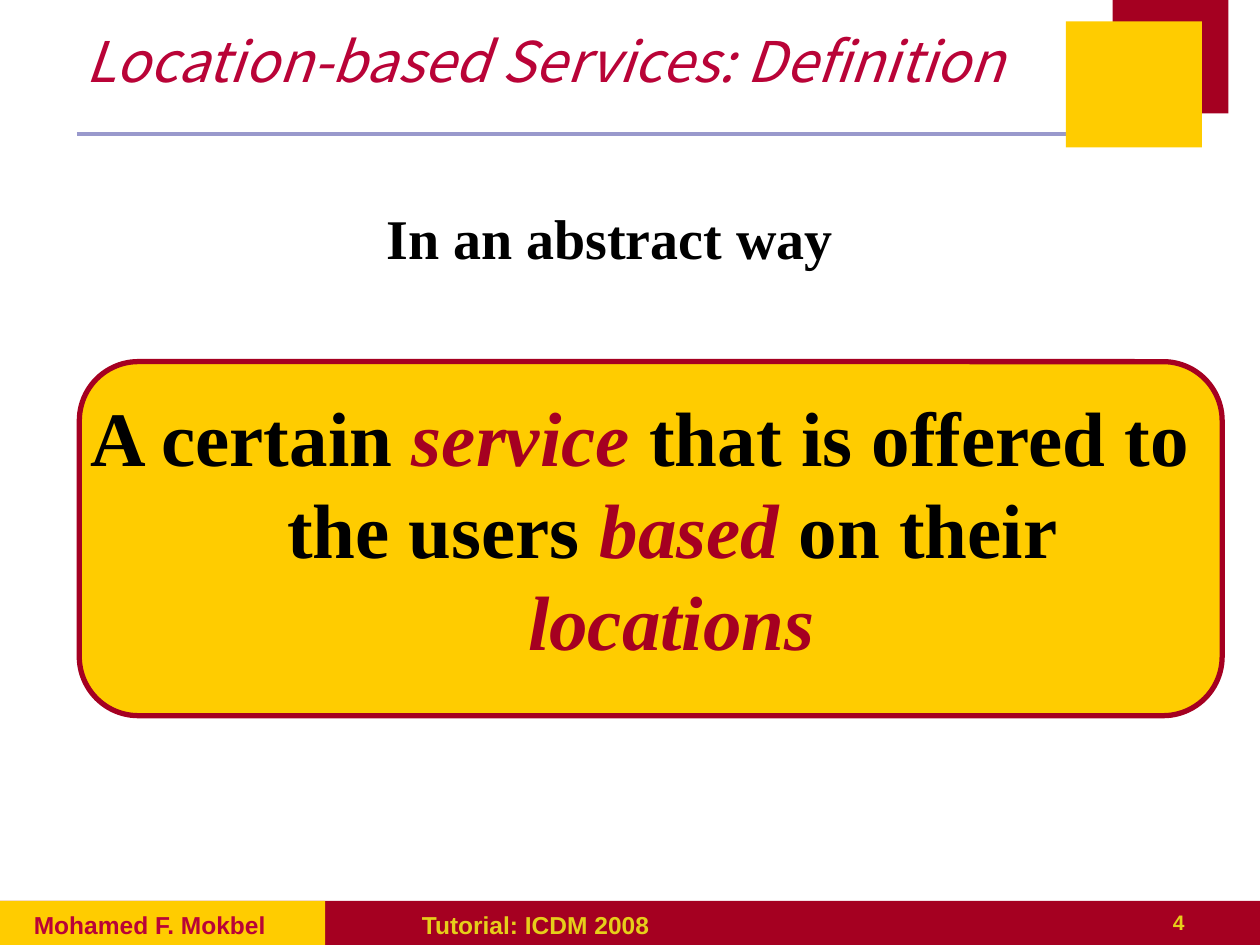
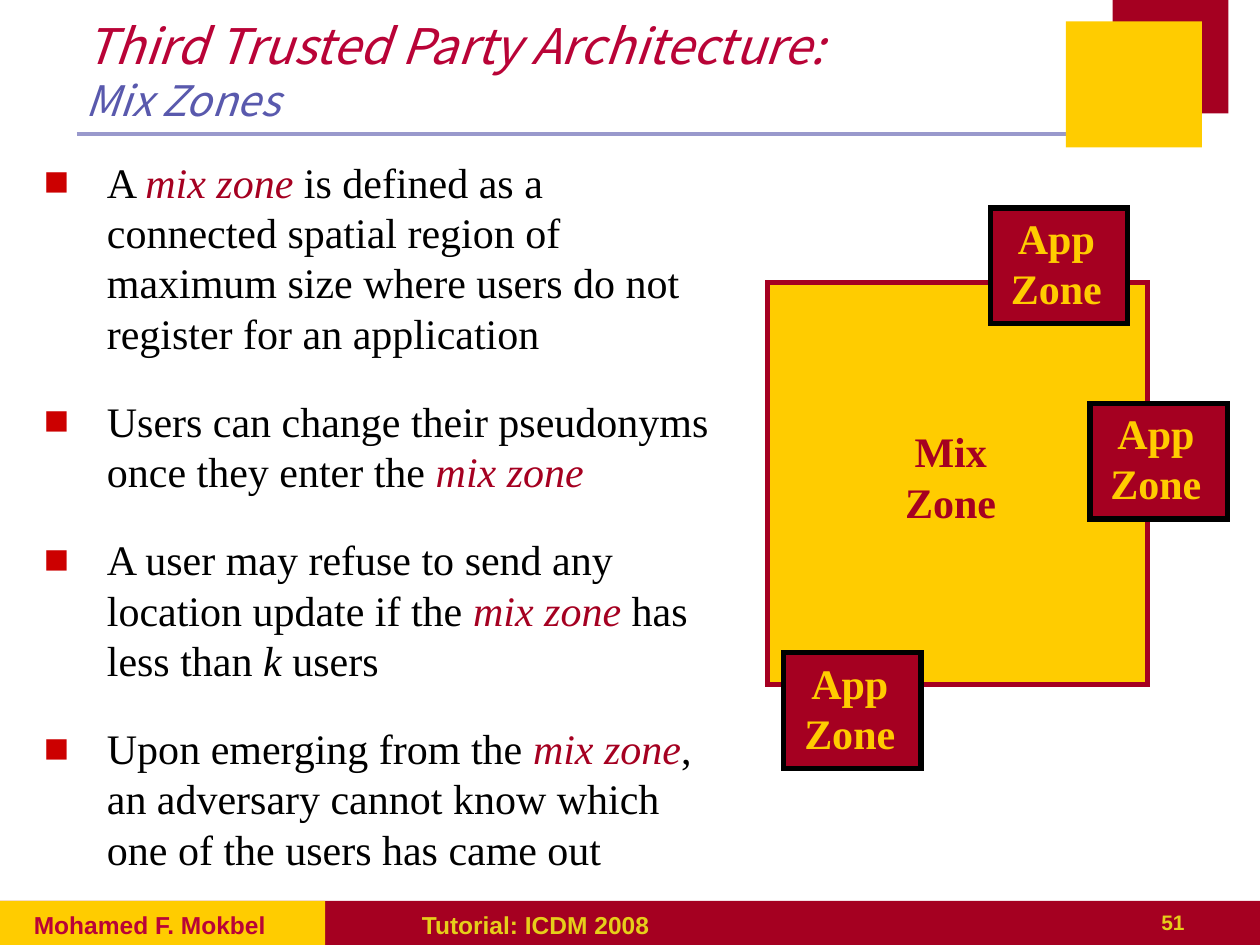
from dataclasses import dataclass
from typing import NamedTuple

from lxml.etree import SubElement
from pptx import Presentation
from pptx.dml.color import RGBColor
from pptx.enum.shapes import MSO_CONNECTOR, MSO_SHAPE
from pptx.enum.text import MSO_ANCHOR, PP_ALIGN
from pptx.oxml.ns import qn
from pptx.util import Inches, Pt


@dataclass(frozen=True)
class Theme:
    maroon: str = "A50021"
    gold: str = "FFCC00"
    crimson: str = "B90337"
    footer_gold: str = "E6CE1A"
    rule: str = "9999CC"
    subtitle: str = "5959AD"
    bullet: str = "CC0000"
    black: str = "000000"
    title_font: str = "Noto Sans CJK KR"
    body_font: str = "Times New Roman"
    footer_font: str = "Arial"
    title_size: int = 32
    long_title_size: int = 28
    lead_size: int = 32
    definition_size: int = 44
    body_size: int = 24
    footer_size: int = 14
    number_size: int = 12


THEME = Theme()


class Box(NamedTuple):
    left: float
    top: float
    width: float
    height: float

    def lengths(self) -> tuple:
        return tuple(Inches(v) for v in self)


class Style(NamedTuple):
    font: str
    size: int
    color: str
    bold: bool = False
    italic: bool = False


class Span(NamedTuple):
    text: str
    style: Style
    break_after: bool = False


class Block(NamedTuple):
    box: Box
    fill: str
    line: str | None = None
    shape: MSO_SHAPE = MSO_SHAPE.RECTANGLE


TITLE = Style(THEME.title_font, THEME.title_size, THEME.crimson, italic=True)
LONG_TITLE = TITLE._replace(size=THEME.long_title_size)
SUBTITLE = TITLE._replace(size=THEME.body_size, color=THEME.subtitle)
BODY = Style(THEME.body_font, THEME.body_size, THEME.black)
TERM = BODY._replace(color=THEME.maroon, italic=True)
LEAD = BODY._replace(size=THEME.lead_size, bold=True)
DEFINITION = LEAD._replace(size=THEME.definition_size)
KEYWORD = DEFINITION._replace(color=THEME.maroon, italic=True)
MIX_LABEL = BODY._replace(color=THEME.maroon, bold=True)
APP_LABEL = MIX_LABEL._replace(color=THEME.gold)
FOOTER = Style(THEME.footer_font, THEME.footer_size, THEME.footer_gold, bold=True)
AUTHOR = FOOTER._replace(color=THEME.crimson)
NUMBER = FOOTER._replace(size=THEME.number_size)

DECORATION = [
    Block(Box(0, 7.15, 10, 0.35), THEME.maroon),
    Block(Box(0, 7.15, 2.58, 0.35), THEME.gold),
    Block(Box(8.83, 0, 0.92, 0.9), THEME.maroon),
    Block(Box(8.46, 0.17, 1.08, 1), THEME.gold),
]
APP_ZONES = [(7.86, 1.65), (8.65, 3.2), (6.22, 5.18)]

MIX_ZONE_POINTS = [
    [Span("A ", BODY), Span("mix zone", TERM),
     Span(" is defined as a connected spatial region of maximum size where "
          "users do not register for an application", BODY)],
    [Span("Users can change their pseudonyms once they enter the ", BODY),
     Span("mix zone", TERM)],
    [Span("A user may refuse to send any location update if the ", BODY),
     Span("mix zone ", TERM), Span("has less than ", BODY),
     Span("k", BODY._replace(italic=True)), Span(" users", BODY)],
    [Span("Upon emerging from the ", BODY), Span("mix zone", TERM),
     Span(", an adversary cannot know which one of the users has came out", BODY)],
]


def write(p, spans: list[Span], align=PP_ALIGN.LEFT) -> None:
    p.alignment = align
    for text, style, break_after in spans:
        r = p.add_run()
        r.text = text
        font = r.font
        font.name, font.size = style.font, Pt(style.size)
        font.bold, font.italic = style.bold, style.italic
        font.color.rgb = RGBColor.from_string(style.color)
        if break_after:
            p.add_line_break()


def hang(p, bullet: bool = False) -> None:
    """Give a half-inch hanging indent, with a square bullet if asked."""
    pPr = p._p.get_or_add_pPr()
    pPr.set("marL", str(Inches(0.5)))
    pPr.set("indent", str(-Inches(0.5)))
    if bullet:
        color = SubElement(pPr, qn("a:buClr"))
        SubElement(color, qn("a:srgbClr"), val=THEME.bullet)
        SubElement(pPr, qn("a:buFont"), typeface=THEME.footer_font)
        SubElement(pPr, qn("a:buChar"), char="■")


def add_text(s, box: Box, spans: list[Span], align=PP_ALIGN.LEFT,
             anchor=MSO_ANCHOR.TOP):
    tf = s.shapes.add_textbox(*box.lengths()).text_frame
    tf.word_wrap = True
    tf.vertical_anchor = anchor
    write(tf.paragraphs[0], spans, align)
    return tf


def add_block(s, block: Block):
    sp = s.shapes.add_shape(block.shape, *block.box.lengths())
    sp.shadow.inherit = False
    sp.fill.solid()
    sp.fill.fore_color.rgb = RGBColor.from_string(block.fill)
    if block.line:
        sp.line.color.rgb = RGBColor.from_string(block.line)
        sp.line.width = Pt(3)
        SubElement(sp._element.spPr.find(qn("a:ln")), qn("a:miter"), lim="800000")
    else:
        sp.line.fill.background()
    return sp


def add_rule(s) -> None:
    line = s.shapes.add_connector(MSO_CONNECTOR.STRAIGHT, Inches(0.61),
                                  Inches(1.06), Inches(8.53), Inches(1.06))
    line.line.color.rgb = RGBColor.from_string(THEME.rule)
    line.line.width = Pt(2.25)
    SubElement(line._element.spPr, qn("a:effectLst"))


def add_base_slide(prs, number: int):
    """Add a blank slide with the title rule, corner squares and footer."""
    s = prs.slides.add_slide(prs.slide_layouts[6])
    add_rule(s)
    for block in DECORATION:
        add_block(s, block)
    add_text(s, Box(7.42, 7.17, 2.08, 0.33), [Span(str(number), NUMBER)],
             PP_ALIGN.RIGHT)
    add_text(s, Box(3.25, 7.17, 4.67, 0.33), [Span("Tutorial: ICDM 2008", FOOTER)])
    add_text(s, Box(0.17, 7.17, 2.33, 0.25), [Span("Mohamed F. Mokbel", AUTHOR)])
    return s


def add_title(s, top: float, spans: list[Span]) -> None:
    add_text(s, Box(0.58, top, 7.67, 0.83), spans, anchor=MSO_ANCHOR.MIDDLE)


def build_definition(prs) -> None:
    s = add_base_slide(prs, 4)
    add_title(s, 0.06, [Span("Location-based Services: Definition", TITLE)])
    lead = add_text(s, Box(0.38, 1.57, 8.92, 0.8),
                    [Span("In an abstract way", LEAD)], PP_ALIGN.CENTER)
    hang(lead.paragraphs[0])
    add_block(s, Block(Box(0.63, 2.87, 9.07, 2.81), THEME.gold, THEME.maroon,
                       MSO_SHAPE.ROUNDED_RECTANGLE))
    definition = add_text(s, Box(0.62, 3.04, 8.92, 2.52), [
        Span("A certain ", DEFINITION), Span("service", KEYWORD),
        Span(" that is offered to the users ", DEFINITION), Span("based", KEYWORD),
        Span(" on their ", DEFINITION), Span("locations", KEYWORD),
    ], PP_ALIGN.CENTER)
    hang(definition.paragraphs[0])


def add_app_zone(s, left: float, top: float) -> None:
    sp = add_block(s, Block(Box(left, top, 1.09, 0.92), THEME.maroon, THEME.black))
    tf = sp.text_frame
    tf.word_wrap = True
    tf.vertical_anchor = MSO_ANCHOR.MIDDLE
    tf.margin_right = Inches(0.14)
    tf.margin_bottom = Inches(0.1)
    write(tf.paragraphs[0], [Span("App Zone", APP_LABEL)], PP_ALIGN.CENTER)


def build_mix_zones(prs) -> None:
    s = add_base_slide(prs, 51)
    add_title(s, 0.14, [
        Span("Third Trusted Party Architecture:", LONG_TITLE, break_after=True),
        Span("Mix Zones", SUBTITLE)])

    first, *rest = MIX_ZONE_POINTS
    points = add_text(s, Box(0.25, 1.19, 5.59, 5.9), first)
    hang(points.paragraphs[0], bullet=True)
    for spans in rest:
        p = points.add_paragraph()
        p.space_before = Pt(21.5)
        hang(p, bullet=True)
        write(p, spans)

    add_block(s, Block(Box(6.09, 2.24, 3.02, 3.19), THEME.gold, THEME.maroon))
    add_text(s, Box(6.85, 3.33, 1.39, 0.9), [Span("Mix Zone", MIX_LABEL)],
             PP_ALIGN.CENTER)
    for left, top in APP_ZONES:
        add_app_zone(s, left, top)


def main() -> None:
    prs = Presentation()
    prs.slide_width, prs.slide_height = Inches(10), Inches(7.5)
    build_definition(prs)
    build_mix_zones(prs)
    prs.save("out.pptx")


if __name__ == "__main__":
    main()
